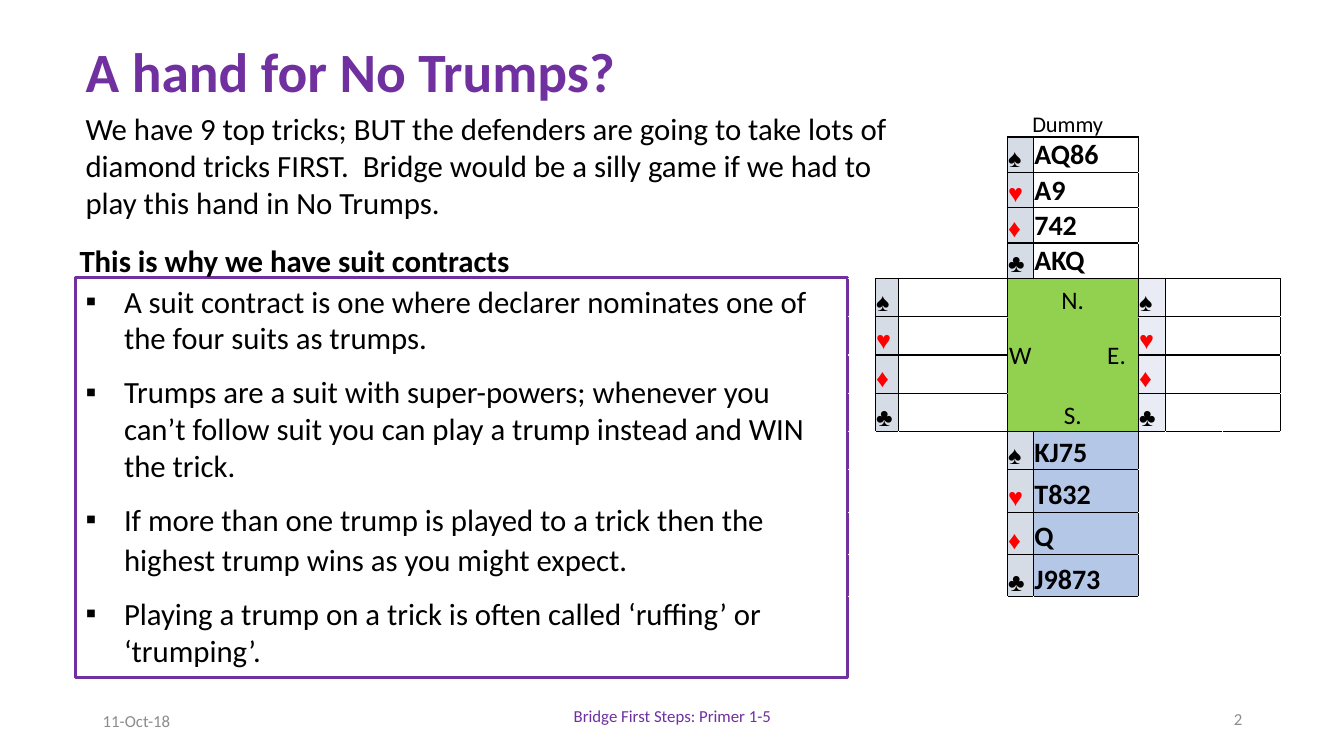
from lxml import etree
from pptx import Presentation
from pptx.dml.color import RGBColor
from pptx.enum import text
from pptx.oxml import ns
from pptx.util import Inches, Pt

# Content
TITLE = "A hand for No Trumps?"
INTRO = ("We have 9 top tricks; BUT the defenders are going to take lots of diamond "
         "tricks FIRST.  Bridge would be a silly game if we had to play this hand in No Trumps.")
HEADING = "This is why we have suit contracts"
BULLETS = [
    "A suit contract is one where declarer nominates one of the four suits as trumps.",
    "Trumps are a suit with super-powers; whenever you can’t follow suit you can play a "
    "trump instead and WIN the trick.",
    "If more than one trump is played to a trick then the highest trump wins as you might expect.",
    "Playing a trump on a trick is often called ‘ruffing’ or ‘trumping’.",
]
SUITS = [("♠", "black"), ("♥", "red"), ("♦", "red"), ("♣", "black")]
NO_CARDS = [""] * 4
COLORS = {"purple": "7030A0", "black": "000000", "red": "FF0000", "grey": "8C8C8C",
          "white": "FFFFFF", "green": "92D050", "suit": "D6DCE5", "east": "E9EBF5",
          "declarer": "B4C7E7"}

# Hands: first row, suit column, last column, cards, suit fill, card fill
HANDS = [
    (1, 3, 4, ["AQ86", "A9", "742", "AKQ"], "suit", None),
    (5, 1, 2, NO_CARDS, "suit", None),
    (5, 5, 7, NO_CARDS, "east", None),
    (9, 3, 4, ["KJ75", "T832", "Q", "J9873"], "suit", "declarer"),
]
# Compass: first cell, last cell, text, alignment, anchor
COMPASS = [
    ((5, 3), (5, 4), "N.", "CENTER", "BOTTOM"),
    ((6, 3), (7, 3), "W", "CENTER", "MIDDLE"),
    ((6, 4), (7, 4), "E.  ", "RIGHT", "MIDDLE"),
    ((8, 3), (8, 4), "S.", "CENTER", "BOTTOM"),
]
COLUMNS = [0.27, 0.23, 1.08, 0.26, 1.04, 0.27, 0.57, 0.57, 0.57]
ROWS = [0.46] + [0.35] * 4 + [0.38] * 5 + [0.42] * 3 + [0.3]


def color(name):
    return RGBColor.from_string(COLORS[name])


def write(paragraph, words, size=18, font="Calibri", fill="black", bold=False, align="LEFT"):
    paragraph.alignment = text.PP_ALIGN[align]
    run = paragraph.add_run()
    run.text = words
    run.font.size = Pt(size)
    run.font.name = font
    run.font.bold = bold
    run.font.color.rgb = color(fill)


def place(shape, left, top, width, height):
    shape.left, shape.top = Inches(left), Inches(top)
    shape.width, shape.height = Inches(width), Inches(height)
    shape.text_frame.auto_size = text.MSO_AUTO_SIZE.NONE


def add_label(slide, words, box, wrap=True, anchor="TOP", **style):
    label = slide.shapes.add_textbox(*map(Inches, box))
    label.text_frame.word_wrap = wrap
    label.text_frame.vertical_anchor = text.MSO_ANCHOR[anchor]
    write(label.text_frame.paragraphs[0], words, **style)


def add_bullet(paragraph):
    properties = paragraph._p.get_or_add_pPr()
    properties.set("marL", str(Inches(0.38)))
    properties.set("indent", str(-Inches(0.38)))
    etree.SubElement(properties, ns.qn("a:buFont"), typeface="Arial")
    etree.SubElement(properties, ns.qn("a:buChar"), char="▪")


def edge_color(zones, cell, neighbour):
    pair = {zones.get(cell), zones.get(neighbour)}
    if pair == {"compass"}:
        return "green"
    if pair != {None}:
        return "black"
    row, column = neighbour
    inside = 0 <= row < len(ROWS) and 0 <= column < len(COLUMNS)
    return "white" if inside else None


def add_border(cell, side, name):
    width = Pt(0.25) if name == "green" else Pt(1)
    line = etree.SubElement(cell._tc.get_or_add_tcPr(), ns.qn("a:ln" + side), w=str(width))
    if name:
        fill = etree.SubElement(line, ns.qn("a:solidFill"))
        etree.SubElement(fill, ns.qn("a:srgbClr"), val=COLORS[name])
    else:
        etree.SubElement(line, ns.qn("a:noFill"))


def paint(cell, name):
    if name:
        cell.fill.solid()
        cell.fill.fore_color.rgb = color(name)


def add_deal(slide):
    frame = slide.shapes.add_table(len(ROWS), len(COLUMNS), Inches(8.41), Inches(0.9),
                                   Inches(sum(COLUMNS)), Inches(sum(ROWS)))
    table = frame.table
    table.first_row = table.horz_banding = False
    for column, width in zip(table.columns, COLUMNS):
        column.width = Inches(width)
    for row, height in zip(table.rows, ROWS):
        row.height = Inches(height)

    # Which cells belong to a hand or to the compass
    zones = {(row, column): "compass" for row in range(5, 9) for column in (3, 4)}
    for top, left, right, *_ in HANDS:
        zones.update({(top + i, column): "hand" for i in range(4)
                      for column in range(left, right + 1)})

    # Borders follow the zones
    for row in range(len(ROWS)):
        for column in range(len(COLUMNS)):
            cell = table.cell(row, column)
            cell.margin_left = cell.margin_right = cell.margin_top = Inches(0.01)
            cell.margin_bottom = 0
            cell.vertical_anchor = text.MSO_ANCHOR.BOTTOM
            for side, down, across in (("L", 0, -1), ("R", 0, 1), ("T", -1, 0), ("B", 1, 0)):
                name = edge_color(zones, (row, column), (row + down, column + across))
                add_border(cell, side, name)
            cell.fill.background()

    # Four hands
    for top, left, right, cards, suit_fill, card_fill in HANDS:
        for i, ((suit, ink), holding) in enumerate(zip(SUITS, cards)):
            suit_cell, card_cell = table.cell(top + i, left), table.cell(top + i, left + 1)
            if right > left + 1:
                card_cell.merge(table.cell(top + i, right))
            paint(suit_cell, suit_fill)
            paint(card_cell, card_fill)
            write(suit_cell.text_frame.paragraphs[0], suit, font="Arial", fill=ink)
            if holding:
                write(card_cell.text_frame.paragraphs[0], holding, size=20, bold=True)

    # Compass
    for first, last, words, align, anchor in COMPASS:
        cell = table.cell(*first)
        cell.merge(table.cell(*last))
        paint(cell, "green")
        cell.vertical_anchor = text.MSO_ANCHOR[anchor]
        write(cell.text_frame.paragraphs[0], words, align=align)


def main():
    presentation = Presentation()
    presentation.slide_width, presentation.slide_height = Inches(13.33), Inches(7.5)
    slide = presentation.slides.add_slide(presentation.slide_layouts[1])
    title, body = slide.placeholders

    # Title
    place(title, 0.75, 0.4, 11.67, 0.68)
    title.text_frame.vertical_anchor = text.MSO_ANCHOR.MIDDLE
    heading = title.text_frame.paragraphs[0]
    heading.line_spacing = 0.9
    write(heading, TITLE, size=39.6, fill="purple", bold=True)

    # Framed list
    place(body, 0.75, 2.75, 7.66, 3.97)
    body.line.color.rgb = color("purple")
    body.line.width = Pt(2.25)
    for i, words in enumerate(BULLETS):
        paragraph = body.text_frame.add_paragraph() if i else body.text_frame.paragraphs[0]
        paragraph.space_before = Pt(12 if i else 0)
        add_bullet(paragraph)
        write(paragraph, words, size=22)
        if i == 2:
            write(paragraph, " ", size=24)

    # Deal diagram and labels
    add_deal(slide)
    add_label(slide, INTRO, (0.75, 1.04, 8.25, 1.21), size=22)
    add_label(slide, "Dummy", (10.14, 1.04, 1.14, 0.37), size=16)
    add_label(slide, HEADING, (0.69, 2.35, 4.51, 0.47), wrap=False, size=22, bold=True)

    # Footer
    add_label(slide, "11-Oct-18", (0.92, 6.95, 3, 0.4), anchor="MIDDLE", size=12, fill="grey")
    add_label(slide, "Bridge First Steps: Primer 1-5", (4.42, 6.9, 4.5, 0.4),
              anchor="MIDDLE", size=12, fill="purple", align="CENTER")
    add_label(slide, "2", (9.42, 6.93, 3, 0.4), anchor="MIDDLE", size=12, fill="grey",
              align="RIGHT")
    presentation.save("out.pptx")


if __name__ == "__main__":
    main()
